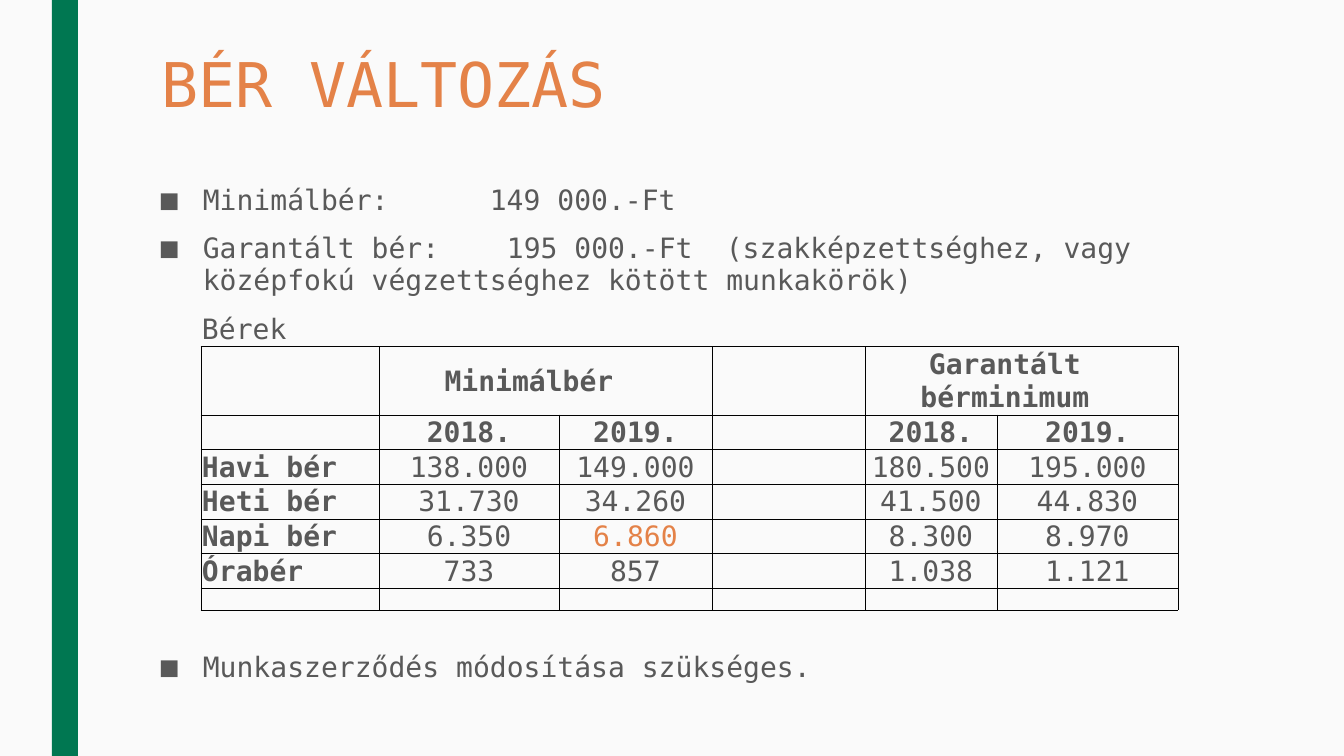
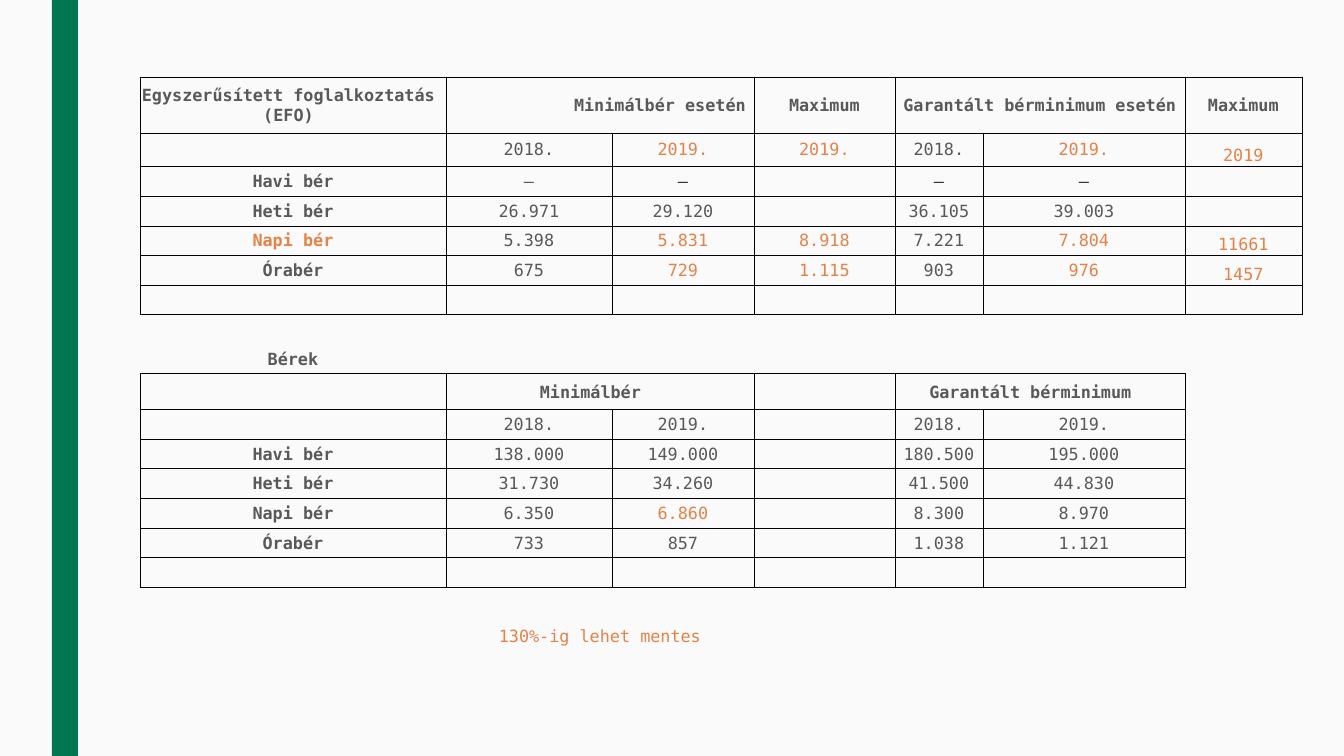
from lxml import etree
from pptx import Presentation
from pptx.dml.color import RGBColor
from pptx.enum import shapes, text
from pptx.oxml.ns import qn
from pptx.util import Emu, Pt

PX = 12192000 / 1344
FONT = "DejaVu Sans Mono"
PAPER = RGBColor(0xFA, 0xFA, 0xFA)
GREEN = RGBColor(0x00, 0x77, 0x51)
ORANGE = RGBColor(0xE4, 0x82, 0x48)
GREY = RGBColor(0x59, 0x59, 0x59)
DARK = RGBColor(0x2C, 0x2F, 0x34)
NO_GRID = "{2D5ABB26-0587-4C30-8999-92F81FD0307C}"
CENTER = text.PP_ALIGN.CENTER
LEFT = text.PP_ALIGN.LEFT
RIGHT = text.PP_ALIGN.RIGHT
MIDDLE = text.MSO_ANCHOR.MIDDLE
BOTTOM = text.MSO_ANCHOR.BOTTOM


def px(*lengths):
    return [Emu(round(length * PX)) for length in lengths]


def add_wage_table(slide, left, top, widths, heights, rows, size, merges, boxes, styles):
    table = slide.shapes.add_table(
        len(heights), len(widths), *px(left, top, sum(widths), sum(heights))
    ).table
    table._tbl.tblPr.find(qn("a:tableStyleId")).text = NO_GRID
    table.first_row = table.horz_banding = False
    for column, width in zip(table.columns, px(*widths)):
        column.width = width
    for row, height in zip(table.rows, px(*heights)):
        row.height = height
    for r, first, last in merges:
        table.cell(r, first).merge(table.cell(r, last))
    for r, words in enumerate(rows):
        for c, word in enumerate(words):
            style = {"color": GREY, "bold": c == 0, "align": CENTER, "anchor": MIDDLE, "pad": 1}
            style.update(styles.get((r, None), {}))
            style.update(styles.get((None, c), {}))
            style.update(styles.get((r, c), {}))
            cell = table.cell(r, c)
            cell.margin_left, cell.margin_top, cell.margin_right, cell.margin_bottom = px(
                1, 1, style["pad"], 0
            )
            cell.vertical_anchor = style["anchor"]
            if any(r in box_rows and c in box_columns for box_rows, box_columns in boxes):
                for side in ("lnL", "lnR", "lnT", "lnB"):
                    line = etree.SubElement(cell._tc.get_or_add_tcPr(), qn("a:" + side), w="6350")
                    fill = etree.SubElement(line, qn("a:solidFill"))
                    etree.SubElement(fill, qn("a:srgbClr"), val="000000")
            cell.fill.background()
            paragraph = cell.text_frame.paragraphs[0]
            paragraph.alignment = style["align"]
            if word:
                run = paragraph.add_run()
                run.text = word
                run.font.name, run.font.size = FONT, Pt(size)
                run.font.bold = style["bold"]
                run.font.color.rgb = style["color"]
            else:
                etree.SubElement(paragraph._p, qn("a:endParaRPr"), sz="800")


wages = [
    ["Havi bér", "138.000", "149.000", "", "180.500", "195.000"],
    ["Heti bér", "31.730", "34.260", "", "41.500", "44.830"],
    ["Napi bér", "6.350", "6.860", "", "8.300", "8.970"],
    ["Órabér", "733", "857", "", "1.038", "1.121"],
]
wage_rows = [
    ["Bérek", "", "", "", "", ""],
    ["", "Minimálbér", "", "", "Garantált bérminimum", ""],
    ["", "2018.", "2019.", "", "2018.", "2019."],
    *wages,
    [""] * 6,
]

prs = Presentation()
prs.slide_width, prs.slide_height = px(1344, 756)
background = prs.slide_master.background.fill
background.solid()
background.fore_color.rgb = PAPER

wage_slide = prs.slides.add_slide(prs.slide_layouts[5])
casual_slide = prs.slides.add_slide(prs.slide_layouts[6])
for slide in (wage_slide, casual_slide):
    band = slide.shapes.add_shape(shapes.MSO_SHAPE.RECTANGLE, *px(52, 0, 26, 756))
    band.shadow.inherit = False
    band.fill.solid()
    band.fill.fore_color.rgb = GREEN
    band.line.fill.background()

title = wage_slide.shapes.title
title.left, title.top, title.width, title.height = px(151, 50, 1058, 163)
title.text_frame.text = "BÉR VÁLTOZÁS"
title.text_frame.vertical_anchor = text.MSO_ANCHOR.TOP
heading = title.text_frame.paragraphs[0]
heading.alignment = LEFT
heading.line_spacing = 0.89
heading.font.name, heading.font.size = FONT, Pt(44)
heading.font.color.rgb = ORANGE

points = wage_slide.shapes.add_textbox(*px(151, 180, 1058, 526)).text_frame
points.word_wrap = True
bullets = [
    ("Minimálbér:\t149 000.-Ft", 10, [329]),
    (
        "Garantált bér:\t195 000.-Ft\t(szakképzettséghez, vagy középfokú végzettséghez kötött munkakörök)",
        10,
        [346, 565],
    ),
    ("Munkaszerződés módosítása szükséges.", 252, []),
]
for i, (words, before, stops) in enumerate(bullets):
    point = points.paragraphs[0] if i == 0 else points.add_paragraph()
    run = point.add_run()
    run.text = words
    run.font.name, run.font.size = FONT, Pt(20)
    run.font.color.rgb = GREY
    point.line_spacing = 0.94
    point.space_before, point.space_after = Pt(before), Pt(2)
    properties = point._p.get_or_add_pPr()
    indent = px(42)[0]
    properties.set("marL", str(indent))
    properties.set("indent", str(-indent))
    etree.SubElement(properties, qn("a:buFont"), typeface=FONT)
    etree.SubElement(properties, qn("a:buChar"), char="■")
    tabs = etree.SubElement(properties, qn("a:tabLst"))
    for stop in px(*stops):
        etree.SubElement(tabs, qn("a:tab"), pos=str(stop), algn="l")

add_wage_table(
    wage_slide, 201, 312,
    widths=[178, 180, 153, 153, 95, 37, 181],
    heights=[34, 66, 34, 33, 34, 34, 33, 22, 22],
    rows=[row[:5] + [""] + row[5:] for row in wage_rows + [[""] * 6]],
    size=20,
    merges=[(0, 5, 6), (1, 1, 2), (1, 4, 6)] + [(r, 4, 5) for r in range(2, 9)],
    boxes=[(range(1, 8), range(7))],
    styles={
        (None, 0): {"align": LEFT},
        (0, 0): {"bold": False},
        (1, None): {"bold": True, "pad": 34},
        (2, None): {"bold": True},
        (5, 2): {"color": ORANGE},
    },
)

casual_rows = [
    [""] * 7,
    ["Egyszerűsített foglalkoztatás (EFO)", "Minimálbér esetén", "", "Maximum",
     "Garantált bérminimum esetén", "", "Maximum"],
    ["", "2018.", "2019.", "2019.", "2018.", "2019.", "2019"],
    ["Havi bér", "–", "–", "", "–", "–", ""],
    ["Heti bér", "26.971", "29.120", "", "36.105", "39.003", ""],
    ["Napi bér", "5.398", "5.831", "8.918", "7.221", "7.804", "11661"],
    ["Órabér", "675", "729", "1.115", "903", "976", "1457"],
    [""] * 7,
    [""] * 7,
]
note_rows = [[""] * 7, ["", "130%-ig lehet mentes"] + [""] * 5]
casual_styles = {(r, c): {"color": ORANGE} for r in (2, 5, 6) for c in (2, 3, 5, 6)}
casual_styles.update({(3, c): {"color": DARK} for c in (2, 4, 5)})
casual_styles.update({
    (None, 6): {"anchor": BOTTOM},
    (1, None): {"bold": True},
    (1, 0): {"pad": 10},
    (1, 1): {"align": RIGHT, "pad": 8},
    (1, 6): {"anchor": MIDDLE},
    (5, 0): {"color": ORANGE},
    (10, None): {"bold": True, "pad": 20},
    (14, 2): {"color": ORANGE},
    (18, 1): {"color": ORANGE, "anchor": BOTTOM},
})
even_rows = [30, 30, 29] * 5
add_wage_table(
    casual_slide, 140, 44,
    widths=[306, 166, 142, 141, 88, 202, 117],
    heights=[33, 56, 33] + even_rows[:7] + [36] + even_rows[7:],
    rows=casual_rows + [row + [""] for row in wage_rows] + note_rows,
    size=12,
    merges=[(r, c, c + 1) for r in (1, 10) for c in (1, 4)] + [(18, 1, 2)],
    boxes=[(range(1, 8), range(7)), (range(10, 17), range(6))],
    styles=casual_styles,
)

prs.save("out.pptx")
